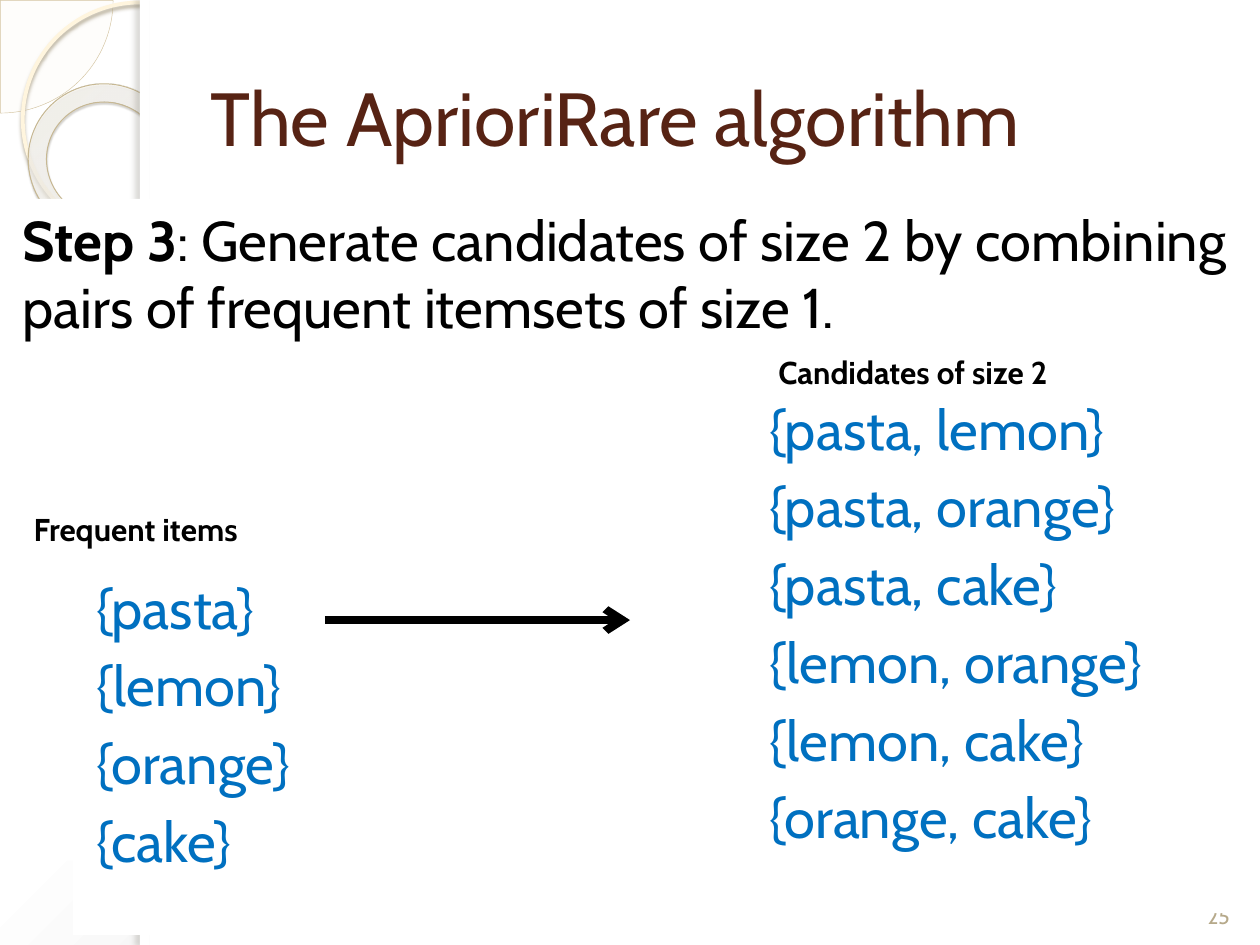
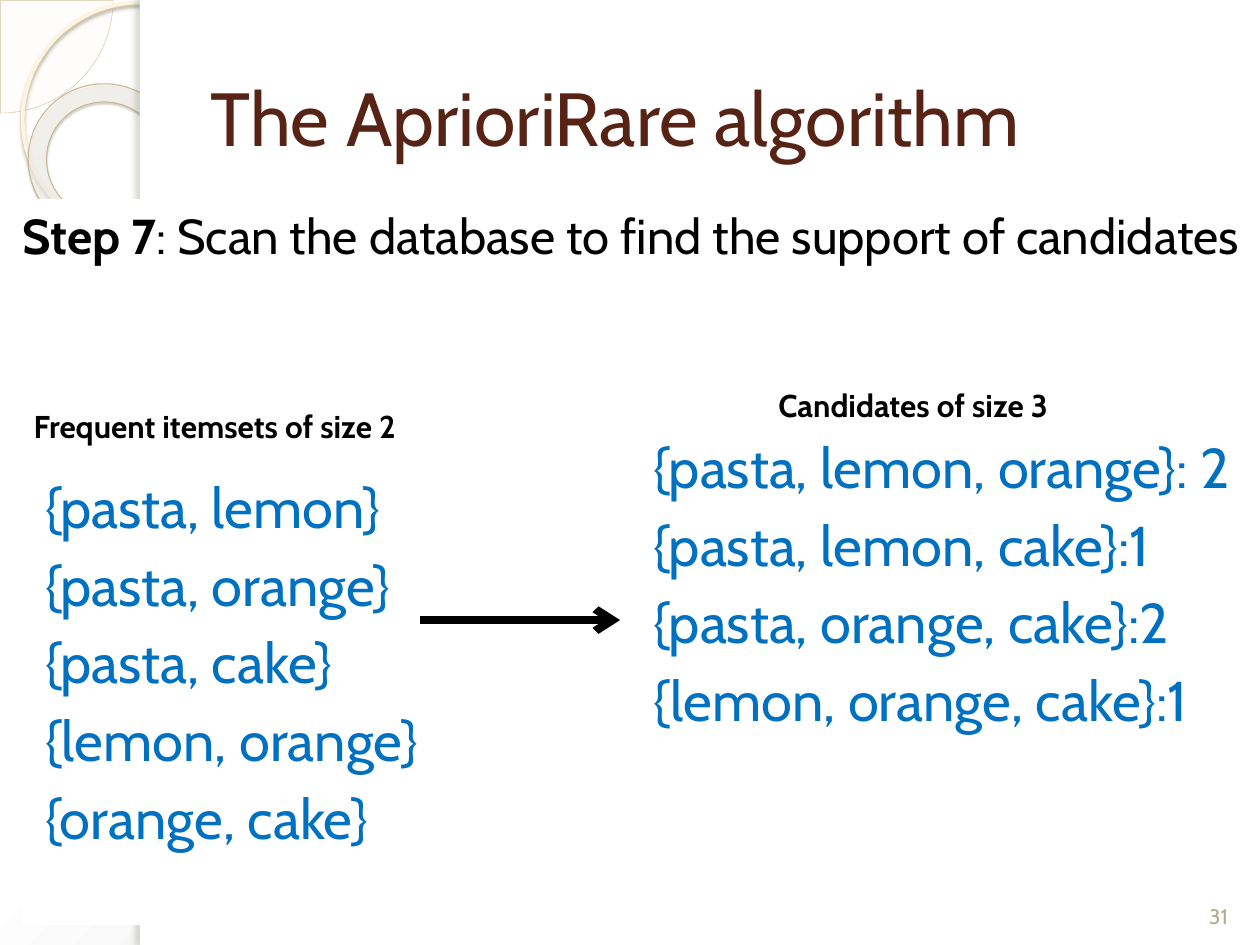
import pptx
import pptx.dml.color
import pptx.enum.shapes
import pptx.enum.text
import pptx.oxml
import pptx.oxml.ns
import pptx.util

Cm = pptx.util.Cm
Pt = pptx.util.Pt
SHAPE = pptx.enum.shapes.MSO_SHAPE
ALIGN = pptx.enum.text.PP_ALIGN
ANCHOR = pptx.enum.text.MSO_ANCHOR

# Content: lengths in cm, boxes as left, top, width, height
TITLE = "The AprioriRare algorithm"
STEPS = [
    {
        "step": "Step 3",
        "task": ": Generate candidates of size 2 by combining pairs of "
                "frequent itemsets of size 1.",
        "size": 32, "width": 25.83, "number": "25",
        "arrow": (6.55, 12.7),
        "itemsets": [
            ((1.47, 11.43, 5.92, 7.42),
             ["{pasta}", "{lemon}", "{orange}", "{cake}"]),
            ((15.04, 7.82, 9.73, 10.59),
             ["{pasta, lemon}", "{pasta, orange}", "{pasta, cake}",
              "{lemon, orange}", "{lemon, cake}", "{orange, cake}"]),
        ],
        "captions": [((0.43, 10.16, 8.26, 1.02), "Frequent items"),
                     ((15.44, 6.99, 8.26, 1.02), "Candidates of size 2")],
    },
    {
        "step": "Step 7",
        "task": ": Scan the database to find the support of candidates",
        "size": 28, "width": 25.43, "number": "31",
        "arrow": (8.46, 12.5),
        "itemsets": [
            ((0.43, 9.4, 9.73, 9.25),
             ["{pasta, lemon}", "{pasta, orange}", "{pasta, cake}",
              "{lemon, orange}", "{orange, cake}"]),
            ((12.7, 8.59, 12.7, 9.25),
             ["{pasta, lemon, orange}: 2", "{pasta, lemon, cake}:1",
              "{pasta, orange, cake}:2", "{lemon, orange, cake}:1"]),
        ],
        "captions": [((0.43, 8.08, 11, 1.02), "Frequent itemsets of size 2"),
                     ((15.44, 7.65, 8.26, 1.02), "Candidates of size 3")],
    },
]

# Shared style
FONT = "Cabin"
BROWN, BLACK, BLUE, SAND, WHITE = "572314", "000000", "0070C0", "B6A98A", "FFFFFF"
TITLE_BOX = (3.99, 0.76, 20.83, 3.18)
NUMBER_BOX = (23.93, 17.53, 1.27, 1.32)
BODY_LEFT, BODY_TOP, BODY_HEIGHT = -0.03, 4.01, 13.34
ARROW_Y = 12.5

# Backdrop: gradient stops are (position, colour, opacity) in percent
BACKDROP = ([(0, WHITE, 100), (40, WHITE, 100), (100, "C5C5C5", 100)],
            (-24, -20, 124, 120))
RING_GLOW = ([(0, "FFFCF6", 70), (70, "FFFEFB", 55), (100, "F0D28E", 60)],
             (-408, -50, 508, 150))
# Shadows are colour, opacity, blur pt, distance pt, direction
DECOR = [
    {"kind": SHAPE.PIE, "box": (-2.26, -2.26, 4.54, 4.54),
     "adjust": (0, 54.02), "fill": "FEFAF4", "opacity": 33,
     "line": ("D3C39F", 0.25)},
    {"kind": SHAPE.OVAL, "box": (0.46, 0.05, 4.72, 4.72),
     "line": ("FFF5DE", 2.15), "shadow": ("B0A68F", 85, 2, 2, 90)},
    {"kind": SHAPE.DONUT, "box": (0.56, 1.7, 3.12, 3.07), "adjust": (0.12,),
     "rotation": 38.6, "gradient": RING_GLOW, "line": ("C7B893", 0.58),
     "shadow": ("5A5444", 35, 1, 1.2, 75)},
    {"kind": SHAPE.RECTANGLE, "box": (2.82, 0, 22.58, 19.05), "fill": WHITE},
    {"kind": SHAPE.RECTANGLE, "box": (2.82, 0, 0.2, 19.05), "fill": WHITE,
     "shadow": ("736F63", 25, 3, 3, 180)},
]


def xml(text):
    tag, rest = text.split(">", 1) if "/>" not in text.split(">", 1)[0] + ">" \
        else (text[:-2], None)
    names = pptx.oxml.ns.nsdecls("a", "p")
    return pptx.oxml.parse_xml(
        f"{tag} {names}/>" if rest is None else f"{tag} {names}>{rest}")


def rgb(colour):
    return pptx.dml.color.RGBColor.from_string(colour)


def colour_xml(colour, opacity):
    return (f'<a:srgbClr val="{colour}">'
            f'<a:alpha val="{opacity * 1000}"/></a:srgbClr>')


def gradient_xml(stops, focus):
    marks = "".join(f'<a:gs pos="{place * 1000}">{colour_xml(colour, opacity)}</a:gs>'
                    for place, colour, opacity in stops)
    left, top, right, bottom = (edge * 1000 for edge in focus)
    return (f'<a:gradFill rotWithShape="1"><a:gsLst>{marks}</a:gsLst>'
            f'<a:path path="circle"><a:fillToRect l="{left}" t="{top}" '
            f'r="{right}" b="{bottom}"/></a:path></a:gradFill>')


def fill_with(shape, colour):
    shape.fill.solid()
    shape.fill.fore_color.rgb = rgb(colour)


def place(shape, box):
    shape.left, shape.top, shape.width, shape.height = (Cm(part) for part in box)


def write(paragraph, text, size, colour, bold=False):
    run = paragraph.add_run()
    run.text = text
    run.font.name = FONT
    run.font.size = Pt(size)
    run.font.bold = bold
    run.font.color.rgb = rgb(colour)


def open_frame(shape, anchor=ANCHOR.TOP):
    frame = shape.text_frame
    frame.word_wrap = True
    frame.auto_size = pptx.enum.text.MSO_AUTO_SIZE.NONE
    frame.vertical_anchor = anchor
    return frame


def set_as_item(paragraph):
    paragraph.space_before = Pt(6)
    properties = paragraph._p.get_or_add_pPr()
    properties.set("marL", str(Cm(0.23)))
    properties.set("indent", "0")
    properties.append(xml("<a:buNone/>"))


def add_text_box(slide, box, anchor=ANCHOR.TOP):
    return slide.shapes.add_textbox(*(Cm(part) for part in box)), anchor


def add_label(slide, box, text, size, colour, bold=False, anchor=ANCHOR.TOP,
              align=ALIGN.LEFT):
    label = slide.shapes.add_textbox(*(Cm(part) for part in box))
    paragraph = open_frame(label, anchor).paragraphs[0]
    paragraph.alignment = align
    write(paragraph, text, size, colour, bold)


def add_itemsets(slide, box, itemsets):
    panel = slide.shapes.add_textbox(*(Cm(part) for part in box))
    fill_with(panel, WHITE)
    frame = open_frame(panel)
    for index, itemset in enumerate(itemsets):
        paragraph = frame.add_paragraph() if index else frame.paragraphs[0]
        set_as_item(paragraph)
        write(paragraph, itemset, 32, BLUE)


def add_arrow(slide, start, end):
    arrow = slide.shapes.add_connector(
        pptx.enum.shapes.MSO_CONNECTOR.STRAIGHT,
        Cm(start), Cm(ARROW_Y), Cm(end), Cm(ARROW_Y))
    arrow.line.color.rgb = rgb(BLACK)
    arrow.line.width = Pt(4.5)
    arrow.line._get_or_add_ln().append(xml('<a:tailEnd type="arrow"/>'))
    arrow.element.spPr.append(xml("<a:effectLst/>"))


def add_decor(slide, part):
    shape = slide.shapes.add_shape(part["kind"], *(Cm(side) for side in part["box"]))
    shape.rotation = part.get("rotation", 0)
    for index, value in enumerate(part.get("adjust", ())):
        shape.adjustments[index] = value
    properties = shape.element.spPr
    # Fill
    if "fill" in part:
        fill_with(shape, part["fill"])
        if "opacity" in part:
            tint = properties.find(".//" + pptx.oxml.ns.qn("a:srgbClr"))
            tint.append(xml(f'<a:alpha val="{part["opacity"] * 1000}"/>'))
    else:
        shape.fill.background()
        if "gradient" in part:
            empty = properties.find(pptx.oxml.ns.qn("a:noFill"))
            properties.replace(empty, xml(gradient_xml(*part["gradient"])))
    # Outline
    if "line" in part:
        colour, width = part["line"]
        shape.line.color.rgb = rgb(colour)
        shape.line.width = Pt(width)
    else:
        shape.line.fill.background()
    # Shadow
    shape.shadow.inherit = False
    if "shadow" in part:
        colour, opacity, blur, distance, direction = part["shadow"]
        effects = properties.find(pptx.oxml.ns.qn("a:effectLst"))
        effects.append(xml(
            f'<a:outerShdw blurRad="{Pt(blur)}" dist="{Pt(distance)}" '
            f'dir="{direction * 60000}" algn="tl" rotWithShape="0">'
            f'{colour_xml(colour, opacity)}</a:outerShdw>'))
    return shape


def dress_layout(layout, slide):
    """Draw the backdrop once and move it to the layout both slides use."""
    layout.element.cSld.insert(0, xml(
        f"<p:bg><p:bgPr>{gradient_xml(*BACKDROP)}<a:effectLst/></p:bgPr></p:bg>"))
    for index, part in enumerate(DECOR):
        element = add_decor(slide, part).element
        element.nvSpPr.cNvPr.set("id", str(100 + index))
        layout.element.cSld.spTree.insert(2 + index, element)


def add_step(slide, step):
    # Title and task
    title = slide.shapes.title
    place(title, TITLE_BOX)
    heading = open_frame(title, ANCHOR.MIDDLE).paragraphs[0]
    heading.alignment = ALIGN.LEFT
    write(heading, TITLE, 43, BROWN)

    body = slide.placeholders[1]
    place(body, (BODY_LEFT, BODY_TOP, step["width"], BODY_HEIGHT))
    fill_with(body, WHITE)
    task = open_frame(body).paragraphs[0]
    set_as_item(task)
    write(task, step["step"], step["size"], BLACK, bold=True)
    write(task, step["task"], step["size"], BLACK)

    # Slide number, then the itemsets on both sides of the arrow
    add_label(slide, NUMBER_BOX, step["number"], 12, SAND,
              anchor=ANCHOR.BOTTOM, align=ALIGN.CENTER)
    for box, itemsets in step["itemsets"]:
        add_itemsets(slide, box, itemsets)
    add_arrow(slide, *step["arrow"])
    for box, caption in step["captions"]:
        add_label(slide, box, caption, 18, BLACK, bold=True)


def main():
    deck = pptx.Presentation()
    deck.slide_width, deck.slide_height = Cm(25.4), Cm(19.05)
    layout = deck.slide_layouts[1]
    slides = [deck.slides.add_slide(layout) for _ in STEPS]
    dress_layout(layout, slides[0])
    for slide, step in zip(slides, STEPS):
        add_step(slide, step)
    deck.save("out.pptx")


if __name__ == "__main__":
    main()
